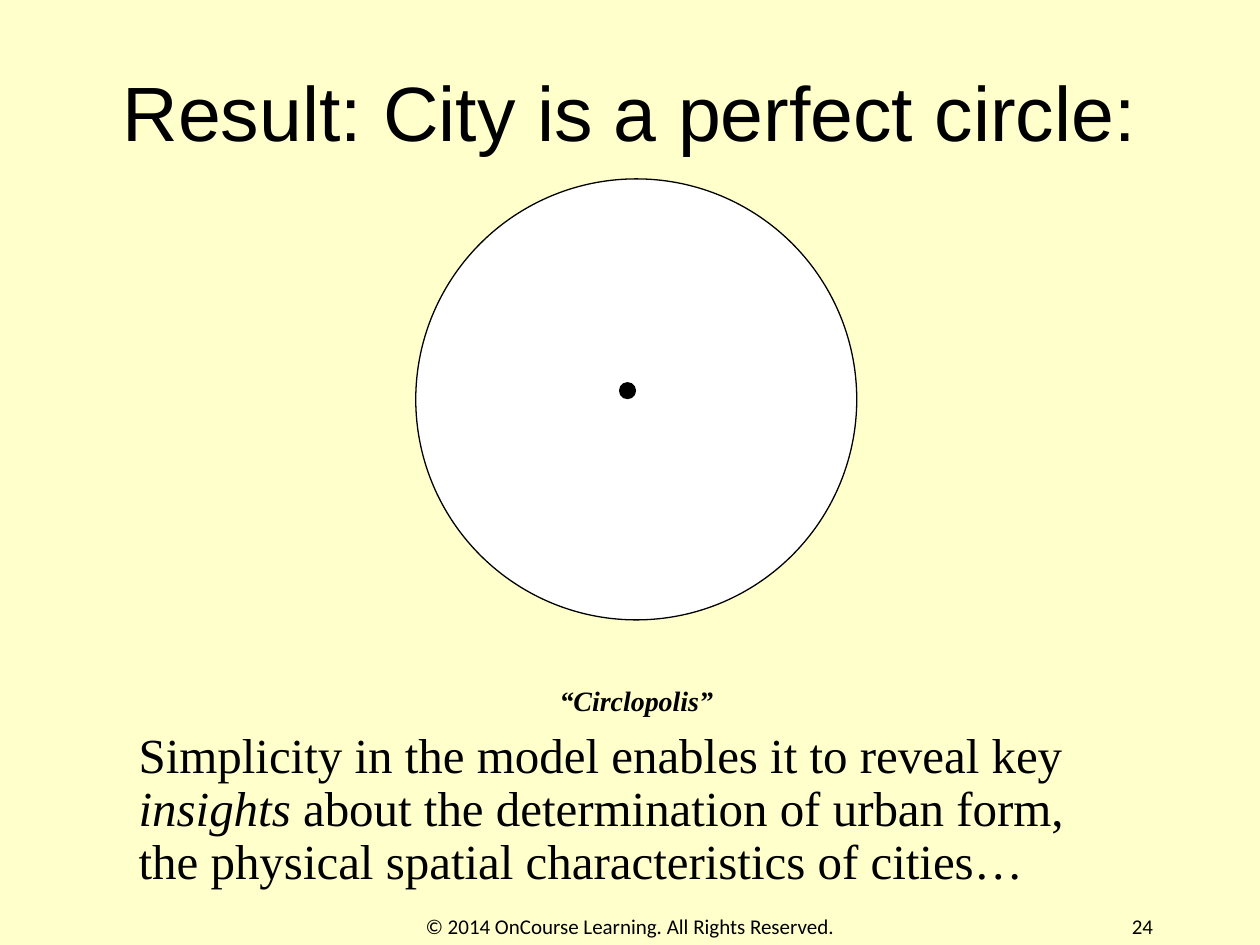
from pptx import Presentation
from pptx.dml.color import RGBColor
from pptx.enum.shapes import MSO_SHAPE
from pptx.enum.text import MSO_ANCHOR, MSO_AUTO_SIZE, PP_ALIGN
from pptx.oxml.xmlchemy import OxmlElement
from pptx.util import Pt

BLACK, WHITE, CREAM = "000000", "FFFFFF", "FFFFCC"
SERIF = "Times New Roman"


def color(hex_code):
    return RGBColor.from_string(hex_code)


def place(part, left, top, width, height):
    part.left, part.top = Pt(left), Pt(top)
    part.width, part.height = Pt(width), Pt(height)


def format_text(part, font_name, size, align, anchor=MSO_ANCHOR.TOP):
    frame = part.text_frame
    frame.word_wrap = True
    frame.auto_size = MSO_AUTO_SIZE.NONE
    frame.vertical_anchor = anchor
    paragraph = frame.paragraphs[0]
    paragraph.alignment = align
    paragraph.font.name = font_name
    paragraph.font.size = Pt(size)
    paragraph.font.color.rgb = color(BLACK)
    return paragraph


def add_label(shapes, text, left, top, width, height, *style):
    label = shapes.add_textbox(Pt(left), Pt(top), Pt(width), Pt(height))
    label.text_frame.text = text
    return format_text(label, *style)


def add_circle(shapes, left, top, width, height, fill):
    circle = shapes.add_shape(MSO_SHAPE.OVAL, Pt(left), Pt(top), Pt(width), Pt(height))
    circle.shadow.inherit = False
    circle.fill.solid()
    circle.fill.fore_color.rgb = color(fill)
    circle.line.color.rgb = color(BLACK)
    circle.line.width = Pt(0.75)


def fill_title(slide, left, top, width, height):
    title = slide.shapes.title
    place(title, left, top, width, height)
    title.text_frame.text = "Result: City is a perfect circle:"
    format_text(title, "Arial", 44, PP_ALIGN.CENTER, MSO_ANCHOR.MIDDLE)


def fill_insight(slide, left, top, width, height):
    body = slide.placeholders[1]
    place(body, left, top, width, height)
    paragraph = body.text_frame.paragraphs[0]
    for text, italic in (
        ("Simplicity in the model enables it to reveal key ", False),
        ("insights", True),
        (" about the determination of urban form, "
         "the physical spatial characteristics of cities…", False),
    ):
        run = paragraph.add_run()
        run.text = text
        if italic:
            run.font.italic = True

    # Plain paragraph without bullet or hanging indent
    properties = paragraph._p.get_or_add_pPr()
    properties.set("marL", "0")
    properties.set("indent", "0")
    properties.append(OxmlElement("a:buNone"))
    format_text(body, SERIF, 28, PP_ALIGN.LEFT)
    paragraph.line_spacing = 0.9
    paragraph.space_before = Pt(0)


def add_city(slide, left, top, diameter):
    city = slide.shapes.add_group_shape().shapes
    # City area and its centre
    add_circle(city, left, top, diameter, diameter, WHITE)
    add_circle(city, left + 116.5, top + 116.5, 9, 9, BLACK)
    # City name
    name = add_label(city, "“Circlopolis”", left + 27, top + 285, 198, 27,
                     SERIF, 16, PP_ALIGN.CENTER)
    name.font.bold = True
    name.font.italic = True


def add_footer(slide, top, height):
    style = ("Calibri", 12)
    add_label(slide.shapes, "© 2014 OnCourse Learning. All Rights Reserved.",
              216, top, 288, height, *style, PP_ALIGN.CENTER, MSO_ANCHOR.BOTTOM)
    add_label(slide.shapes, "24", 516, top, 150, height,
              *style, PP_ALIGN.RIGHT, MSO_ANCHOR.BOTTOM)


def main():
    deck = Presentation()
    deck.slide_width, deck.slide_height = Pt(720), Pt(540)
    slide = deck.slides.add_slide(deck.slide_layouts[1])
    slide.background.fill.solid()
    slide.background.fill.fore_color.rgb = color(CREAM)

    fill_title(slide, 54, 18, 612, 90)
    add_footer(slide, 504, 36)
    fill_insight(slide, 72, 414, 576, 102)
    add_city(slide, 237.6, 102.24, 252)
    deck.save("out.pptx")


if __name__ == "__main__":
    main()
